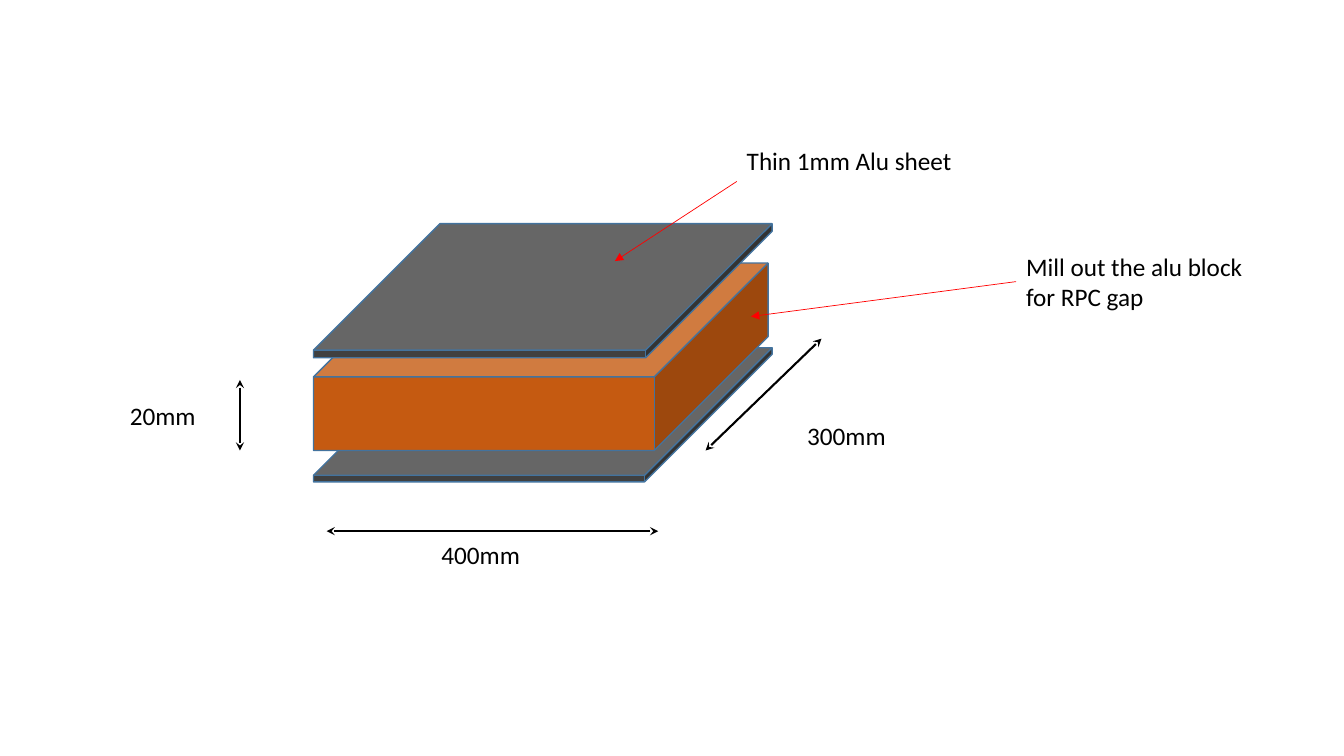
from lxml.etree import SubElement
from pptx import Presentation
from pptx.dml.color import RGBColor
from pptx.enum.shapes import MSO_CONNECTOR, MSO_SHAPE
from pptx.oxml.ns import qn
from pptx.util import Pt

BLACK = RGBColor(0x00, 0x00, 0x00)
RED = RGBColor(0xFF, 0x00, 0x00)
SHEET_GREY = RGBColor(0x40, 0x40, 0x40)
BLOCK_ORANGE = RGBColor(0xC5, 0x5A, 0x11)
EDGE_BLUE = RGBColor(0x43, 0x73, 0x9E)

STACK_LEFT = 223.9
SHEET_SIZE = (327.6, 95.8)
BLOCK_SIZE = (324.7, 133.9)
LAYERS = [
    (248.4, SHEET_SIZE, 0.951, SHEET_GREY),
    (187.9, BLOCK_SIZE, 0.607, BLOCK_ORANGE),
    (159.8, SHEET_SIZE, 0.943, SHEET_GREY),
]
LABEL_SIZE = (101.5, 29.1)
DIMENSIONS = [
    ("400mm", (308.2, 381.6), (233.3, 379.4), (470.2, 379.4), 1.75),
    ("300mm", (569.5, 296.6), (504, 321.8), (586.8, 241.9), 1.5),
    ("20mm", (85.7, 282.2), (171.4, 271.4), (171.4, 321.8), 1.5),
]
SHEET_NOTE = ("Thin 1mm Alu sheet", (526.3, 100.1), (166.3, 29.1))
SHEET_ARROW = ((526.3, 129.6), (439.2, 186.5))
BLOCK_NOTE = ("Mill out the alu block for RPC gap", (725.8, 175.7), (178.6, 50.9))
BLOCK_ARROW = ((725.8, 201.15), (536.4, 226.1))


def add_text(slide, text, position, size, font="Calibri", points=18, color=BLACK):
    box = slide.shapes.add_textbox(*map(Pt, position + size))
    box.text_frame.word_wrap = True
    span = box.text_frame.paragraphs[0].add_run()
    span.text = text
    span.font.name = font
    span.font.size = Pt(points)
    span.font.color.rgb = color
    return box


def add_layer(slide, top, size, depth, color):
    cube = slide.shapes.add_shape(MSO_SHAPE.CUBE, Pt(STACK_LEFT), Pt(top), *map(Pt, size))
    cube.adjustments[0] = depth
    cube.shadow.inherit = False
    cube.fill.solid()
    cube.fill.fore_color.rgb = color
    cube.line.color.rgb = EDGE_BLUE
    cube.line.width = Pt(1)


def add_arrow(slide, start, end, color, width, **heads):
    arrow = slide.shapes.add_connector(MSO_CONNECTOR.STRAIGHT, *map(Pt, start + end))
    arrow.line.color.rgb = color
    arrow.line.width = Pt(width)
    outline = arrow.line._get_or_add_ln()
    for end_name, style in heads.items():
        SubElement(outline, qn(f"a:{end_name}"), type=style)
    SubElement(arrow._element.spPr, qn("a:effectLst"))
    return arrow


def main():
    deck = Presentation()
    deck.slide_width, deck.slide_height = Pt(960), Pt(540)
    slide = deck.slides.add_slide(deck.slide_layouts[6])
    for layer in LAYERS:
        add_layer(slide, *layer)
    for text, position, start, end, width in DIMENSIONS:
        add_arrow(slide, start, end, BLACK, width, headEnd="stealth", tailEnd="stealth")
        add_text(slide, text, position, LABEL_SIZE)
    add_text(slide, *SHEET_NOTE)
    add_arrow(slide, *SHEET_ARROW, RED, 0.5, tailEnd="triangle")
    block_note = add_text(slide, *BLOCK_NOTE)
    block_arrow = add_arrow(slide, *BLOCK_ARROW, RED, 0.5, tailEnd="triangle")
    block_arrow.begin_connect(block_note, 1)
    deck.save("out.pptx")


if __name__ == "__main__":
    main()
